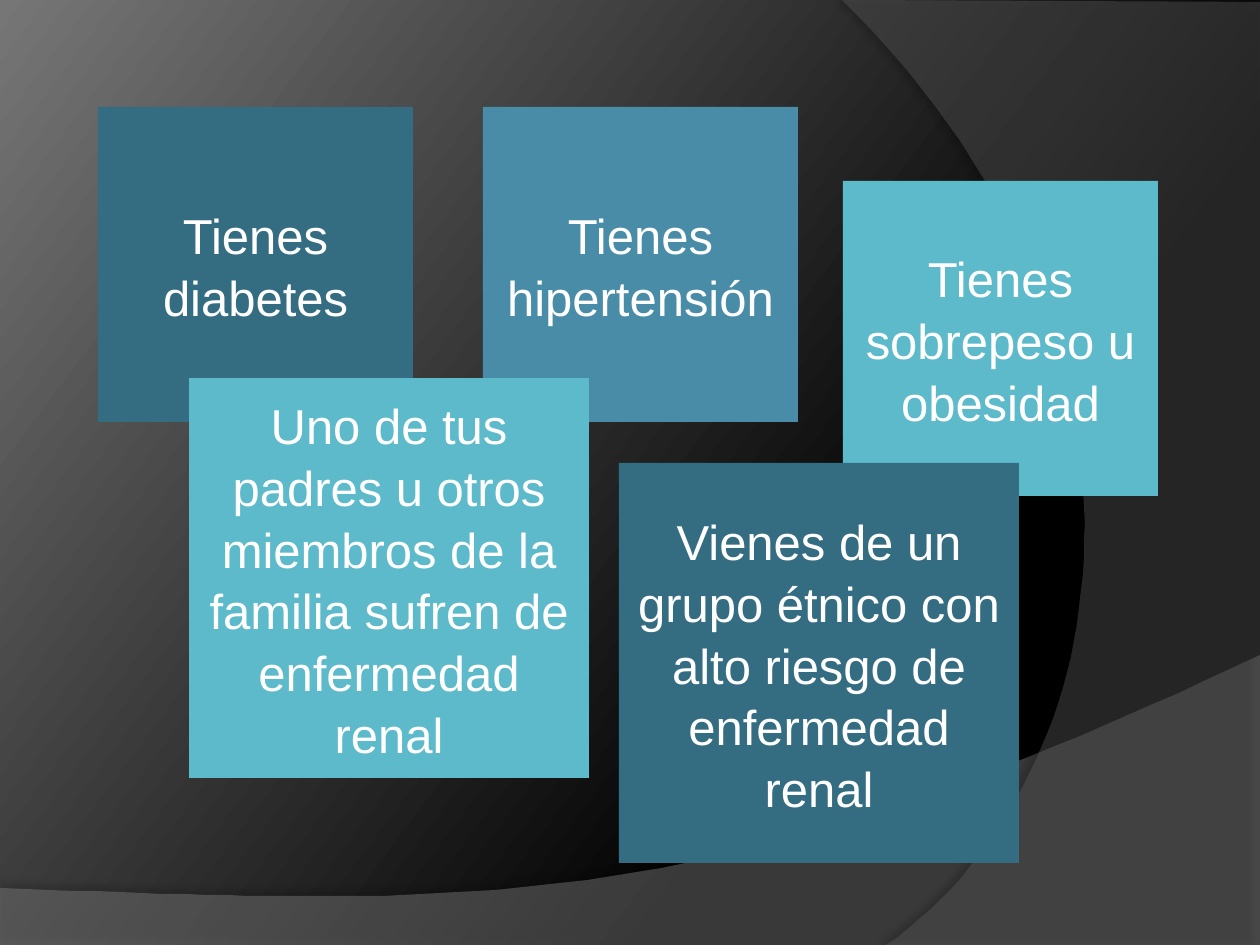
from lxml import etree
from pptx import Presentation
from pptx.dml.color import RGBColor
from pptx.enum.shapes import MSO_SHAPE as Shape
from pptx.enum.text import MSO_ANCHOR as Anchor, PP_ALIGN as Align
from pptx.oxml.ns import qn
from pptx.util import Pt

PX = 914400 // 126
WHITE = RGBColor(0xFF, 0xFF, 0xFF)
BLACK = RGBColor(0x00, 0x00, 0x00)
LIGHT_GRAY = RGBColor(0x76, 0x76, 0x76)
MID_GRAY = RGBColor(0x7F, 0x7F, 0x7F)
DARK_GRAY = RGBColor(0x5E, 0x5E, 0x5E)
TEAL = RGBColor(0x34, 0x6C, 0x81)
BLUE = RGBColor(0x48, 0x8C, 0xA7)
AQUA = RGBColor(0x5D, 0xBA, 0xCA)

SMALL, LARGE = 315, 400
CARDS = [
    ("Tienes diabetes", 98, 107, SMALL, TEAL),
    ("Tienes hipertensión", 483, 107, SMALL, BLUE),
    ("Tienes sobrepeso u obesidad", 843, 181, SMALL, AQUA),
    ("Uno de tus padres u otros miembros de la familia sufren de enfermedad renal",
     189, 378, LARGE, AQUA),
    ("Vienes de un grupo étnico con alto riesgo de enfermedad renal",
     619, 463, LARGE, TEAL),
]
WAVES = [
    dict(corners=[(0, 888), (0, 946), (1260, 946)],
         curve=[(1260, 655), (704, 919), (493, 906), (0, 888)],
         color=MID_GRAY, opacity=45, shadow=(35, 4, 3.5, 270)),
    dict(corners=[(1260, 2), (1260, 945)],
         curve=[(886, 945), (1123, 780), (1193, 346), (842, 0)],
         color=DARK_GRAY, opacity=40, shadow=(45, 4, 4, 180)),
]


def bezier(points, steps=60):
    for step in range(steps + 1):
        t = step / steps
        weights = ((1 - t) ** 3, 3 * t * (1 - t) ** 2, 3 * t * t * (1 - t), t ** 3)
        yield tuple(sum(w * point[axis] for w, point in zip(weights, points))
                    for axis in (0, 1))


def set_alpha(color_element, percent):
    etree.SubElement(color_element, qn("a:alpha"), val=str(percent * 1000))


def add_shadow(shape, opacity, blur, distance, angle):
    shape.shadow.inherit = False
    effects = shape._element.spPr.find(qn("a:effectLst"))
    shadow = etree.SubElement(
        effects, qn("a:outerShdw"), blurRad=str(Pt(blur)), dist=str(Pt(distance)),
        dir=str(angle * 60000), algn="ctr", rotWithShape="0")
    set_alpha(etree.SubElement(shadow, qn("a:srgbClr"), val=str(BLACK)), opacity)


def add_wave(page, corners, curve, color, opacity, shadow):
    start, *rest = corners
    builder = page.shapes.build_freeform(*start, scale=PX)
    builder.add_line_segments([*rest, *bezier(curve)], close=True)
    wave = builder.convert_to_shape()
    wave.fill.solid()
    wave.fill.fore_color.rgb = color
    set_alpha(wave._element.spPr.find(qn("a:solidFill"))[0], opacity)
    wave.line.fill.background()
    add_shadow(wave, *shadow)


def add_card(page, text, left, top, side, color):
    card = page.shapes.add_shape(Shape.RECTANGLE, left * PX, top * PX, side * PX, side * PX)
    card.shadow.inherit = False
    card.fill.solid()
    card.fill.fore_color.rgb = color
    card.line.fill.background()
    frame = card.text_frame
    frame.word_wrap = True
    frame.vertical_anchor = Anchor.MIDDLE
    frame.text = text
    para = frame.paragraphs[0]
    para.alignment = Align.CENTER
    para.line_spacing = 1.05
    para.font.name = "Arial"
    para.font.size = Pt(28)
    para.font.color.rgb = WHITE


def main():
    deck = Presentation()
    deck.slide_width, deck.slide_height = 1260 * PX, 945 * PX
    page = deck.slides.add_slide(deck.slide_layouts[6])
    backdrop = page.background.fill
    backdrop.gradient()
    backdrop.gradient_angle = 143
    for stop, position, color in zip(backdrop.gradient_stops, (0.3, 1), (BLACK, LIGHT_GRAY)):
        stop.position = position
        stop.color.rgb = color
    for wave in WAVES:
        add_wave(page, **wave)
    for card in CARDS:
        add_card(page, *card)
    deck.save("out.pptx")


if __name__ == "__main__":
    main()
